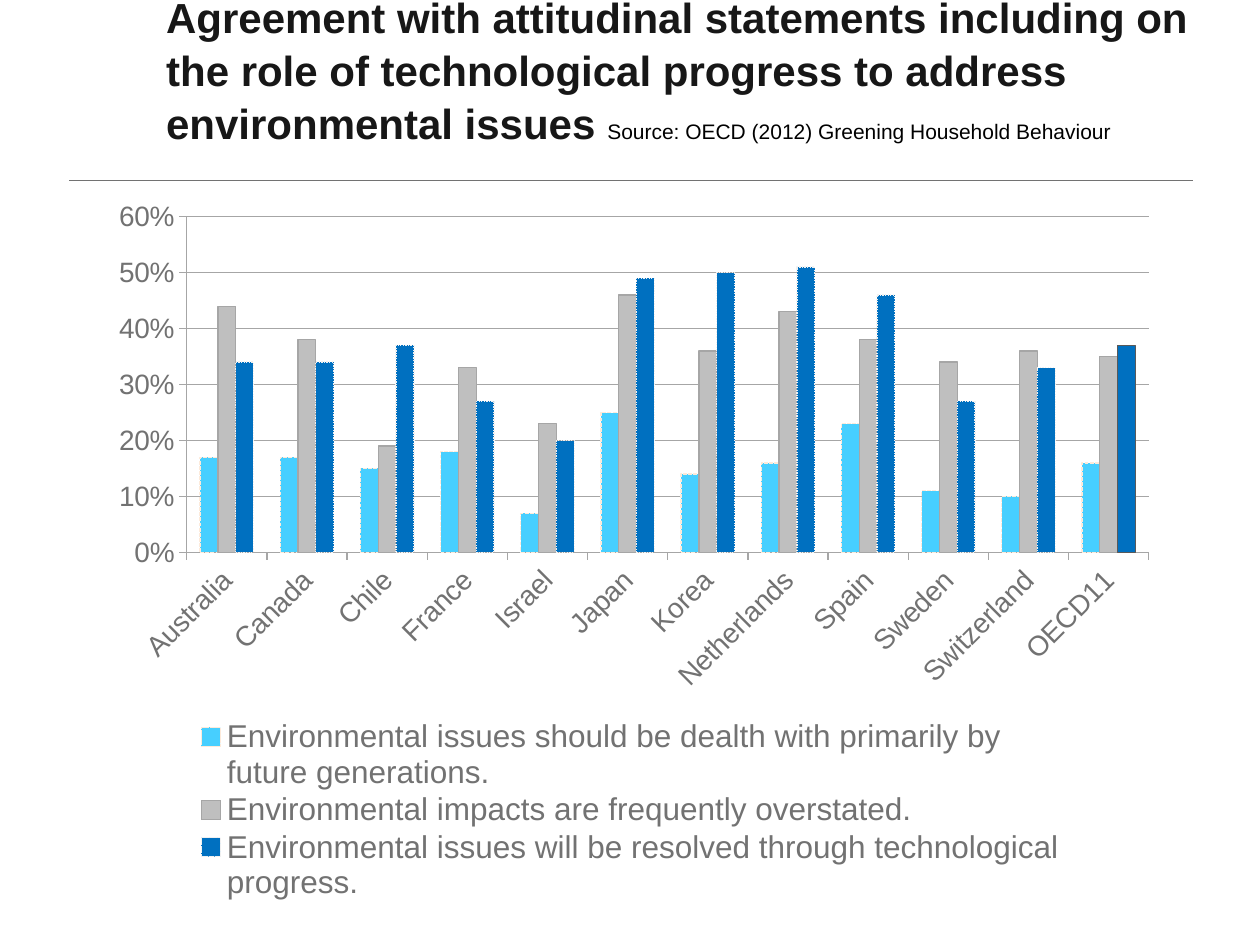
from dataclasses import dataclass
from lxml.etree import SubElement
from pptx import Presentation
from pptx.chart.data import CategoryChartData as Data
from pptx.dml.color import RGBColor as Color
from pptx.enum.chart import XL_CHART_TYPE as Kind, XL_LEGEND_POSITION as Spot, XL_TICK_MARK as Tick
from pptx.enum.dml import MSO_LINE as Dash
from pptx.enum.text import MSO_ANCHOR as Anchor
from pptx.oxml import parse_xml as to_xml
from pptx.oxml.ns import nsdecls, qn
from pptx.util import Inches, Pt


@dataclass(frozen=True)
class Theme:
    face: str = "Arial"
    base: str = "TeX Gyre Schola"
    ink: str = "171717"
    black: str = "000000"
    gray: str = "727272"
    grid: str = "A6A6A6"
    edge: str = "595959"
    head: int = 24
    note: int = 12
    small: int = 10
    tick: int = 16
    key: int = 18


NAMES = ["Australia", "Canada", "Chile", "France", "Israel", "Japan", "Korea",
         "Netherlands", "Spain", "Sweden", "Switzerland", "OECD11"]
SERIES = [
    ("Environmental issues should be dealth with primarily by future generations.",
     [0.17, 0.17, 0.15, 0.18, 0.07, 0.25, 0.14, 0.16, 0.23, 0.11, 0.1, 0.16],
     "47CFFF", "FDEADA", Dash.SQUARE_DOT),
    ("Environmental impacts are frequently overstated.",
     [0.44, 0.38, 0.19, 0.33, 0.23, 0.46, 0.36, 0.43, 0.38, 0.34, 0.36, 0.35],
     "BFBFBF", "A6A6A6", Dash.SOLID),
    ("Environmental issues will be resolved through technological progress.",
     [0.34, 0.34, 0.37, 0.27, 0.2, 0.49, 0.5, 0.51, 0.46, 0.27, 0.33, 0.37],
     "0070C0", "F0F0F0", Dash.ROUND_DOT),
]


class Deck:
    def __init__(self, show, theme):
        self.theme = theme
        self.slide = show.slides.add_slide(show.slide_layouts[6])

    def font(self, font, size, color, face=None, bold=False):
        font.size, font.bold = Pt(size), bold
        font.name = face or self.theme.face
        font.color.rgb = Color.from_string(color)

    def stroke(self, line, color, width, dash=Dash.SOLID):
        line.color.rgb = Color.from_string(color)
        line.width, line.dash_style = Pt(width), dash

    def paint(self, part, fill, edge, dash=Dash.SOLID):
        part.format.fill.solid()
        part.format.fill.fore_color.rgb = Color.from_string(fill)
        self.stroke(part.format.line, edge, 0.75, dash)

    def rule(self, x, y, wide):
        line = self.slide.shapes.add_connector(
            1, Inches(x), Inches(y), Inches(x + wide), Inches(y))
        self.stroke(line.line, self.theme.gray, 0.5)
        SubElement(line._element.spPr, qn("a:effectLst"))

    def title(self, box, text, source):
        frame = self.slide.shapes.add_textbox(*map(Inches, box)).text_frame
        frame.word_wrap = True
        frame.vertical_anchor = Anchor.MIDDLE
        frame.margin_top, frame.margin_bottom = 0, Inches(0.34)
        para = frame.paragraphs[0]
        para.line_spacing = 1.05
        for words, size, color, bold in (
                (text, self.theme.head, self.theme.ink, True),
                (source, self.theme.note, self.theme.black, False)):
            run = para.add_run()
            run.text = words
            self.font(run.font, size, color, bold=bold)

    def place(self, part, spot, at, inner=False):
        for old in part.findall(qn("c:layout")):
            part.remove(old)
        kind = '<c:layoutTarget val="inner"/>' if inner else ""
        modes = "".join(f'<c:{k}Mode val="edge"/>' for k in "xy")
        sizes = "".join(f'<c:{k} val="{v}"/>' for k, v in zip("xywh", spot))
        part.insert(at, to_xml(
            f'<c:layout {nsdecls("c")}><c:manualLayout>{kind}{modes}{sizes}'
            '</c:manualLayout></c:layout>'))

    def axis(self, axis):
        axis.major_tick_mark, axis.minor_tick_mark = Tick.OUTSIDE, Tick.NONE
        self.stroke(axis.format.line, self.theme.grid, 0.75)
        self.font(axis.tick_labels.font, self.theme.tick, self.theme.gray)

    def chart(self, box, names, rows, plot_box, key_box):
        look = self.theme
        data = Data(number_format="0%")
        data.categories = names
        for name, vals, *_ in rows:
            data.add_series(name, vals)
        chart = self.slide.shapes.add_chart(
            Kind.COLUMN_CLUSTERED, *map(Inches, box), data).chart
        chart.has_title = False
        self.font(chart.font, look.small, look.gray, look.base)

        plot = chart.plots[0]
        plot.gap_width, plot.overlap = 150, 0
        plot.vary_by_categories = False
        for bars, (_, _, fill, edge, dash) in zip(plot.series, rows):
            self.paint(bars, fill, edge, dash)
        self.paint(bars.points[len(names) - 1], fill, look.edge)

        cats, vals = chart.category_axis, chart.value_axis
        self.axis(cats)
        self.axis(vals)
        cats._element.find(qn("c:txPr")).find(qn("a:bodyPr")).set("rot", "-2700000")
        vals.minimum_scale, vals.maximum_scale, vals.major_unit = 0, 0.6, 0.1
        vals.tick_labels.number_format = "0%"
        vals.tick_labels.number_format_is_linked = False
        vals.has_major_gridlines = True
        self.stroke(vals.major_gridlines.format.line, look.grid, 0.75)

        chart.has_legend = True
        key = chart.legend
        key.position, key.include_in_layout = Spot.BOTTOM, False
        self.font(key.font, look.key, look.gray)
        self.place(key._element, key_box, 1)
        self.place(chart._chartSpace.chart.plotArea, plot_box, 0, True)


def main():
    show = Presentation()
    show.slide_width, show.slide_height = Inches(10), Inches(7.5)
    deck = Deck(show, Theme())
    deck.rule(0.55, 1.43, 8.92)
    deck.title((1.22, 0.36, 8.78, 0.71),
               "Agreement with attitudinal statements including on the role of "
               "technological progress to address environmental issues ",
               "Source: OECD (2012) Greening Household Behaviour")
    deck.chart((0.71, 1.55, 8.58, 5.67), NAMES, SERIES,
               (0.09, 0.03, 0.89, 0.47), (0.09, 0.73, 0.82, 0.26))
    show.save("out.pptx")


if __name__ == "__main__":
    main()
